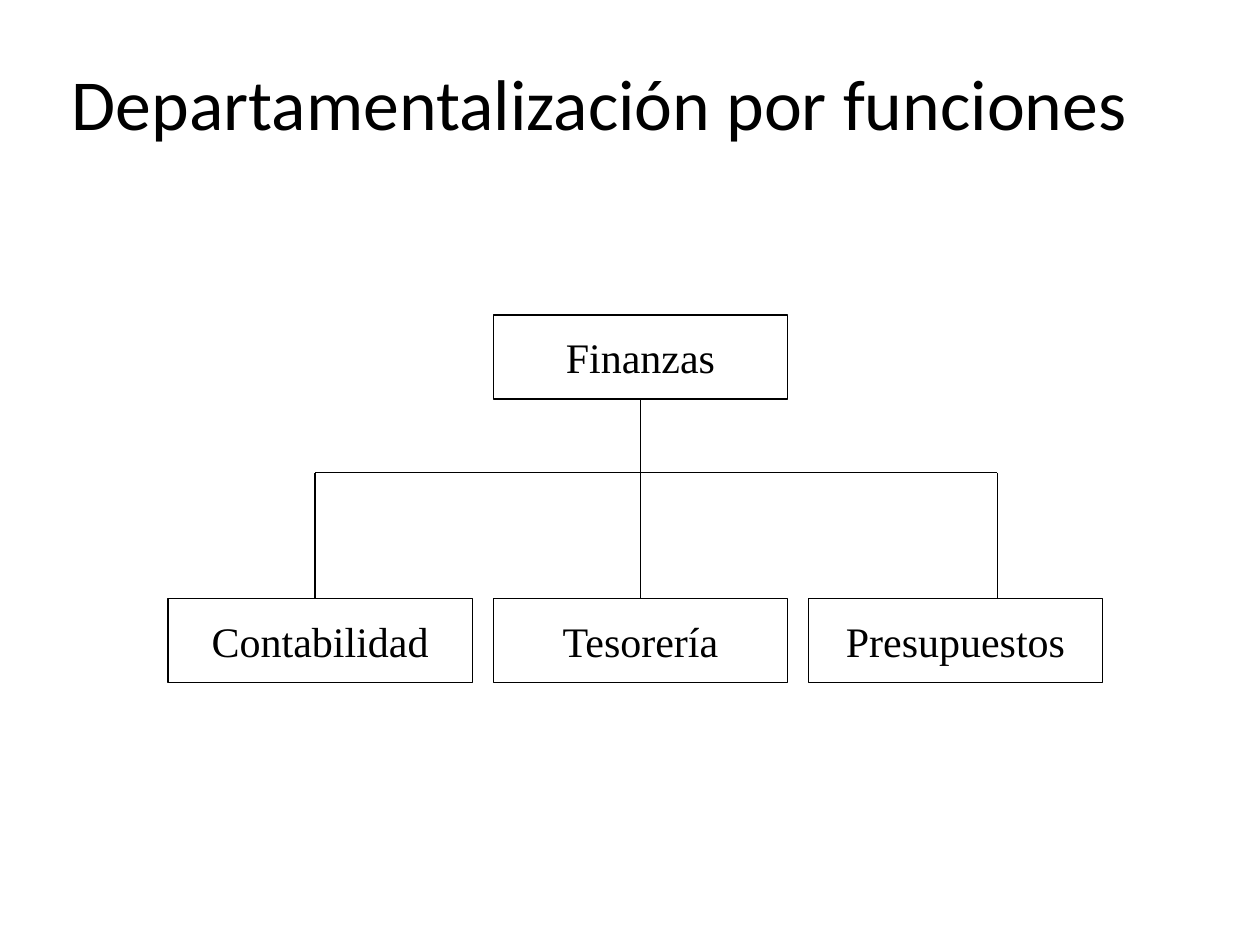
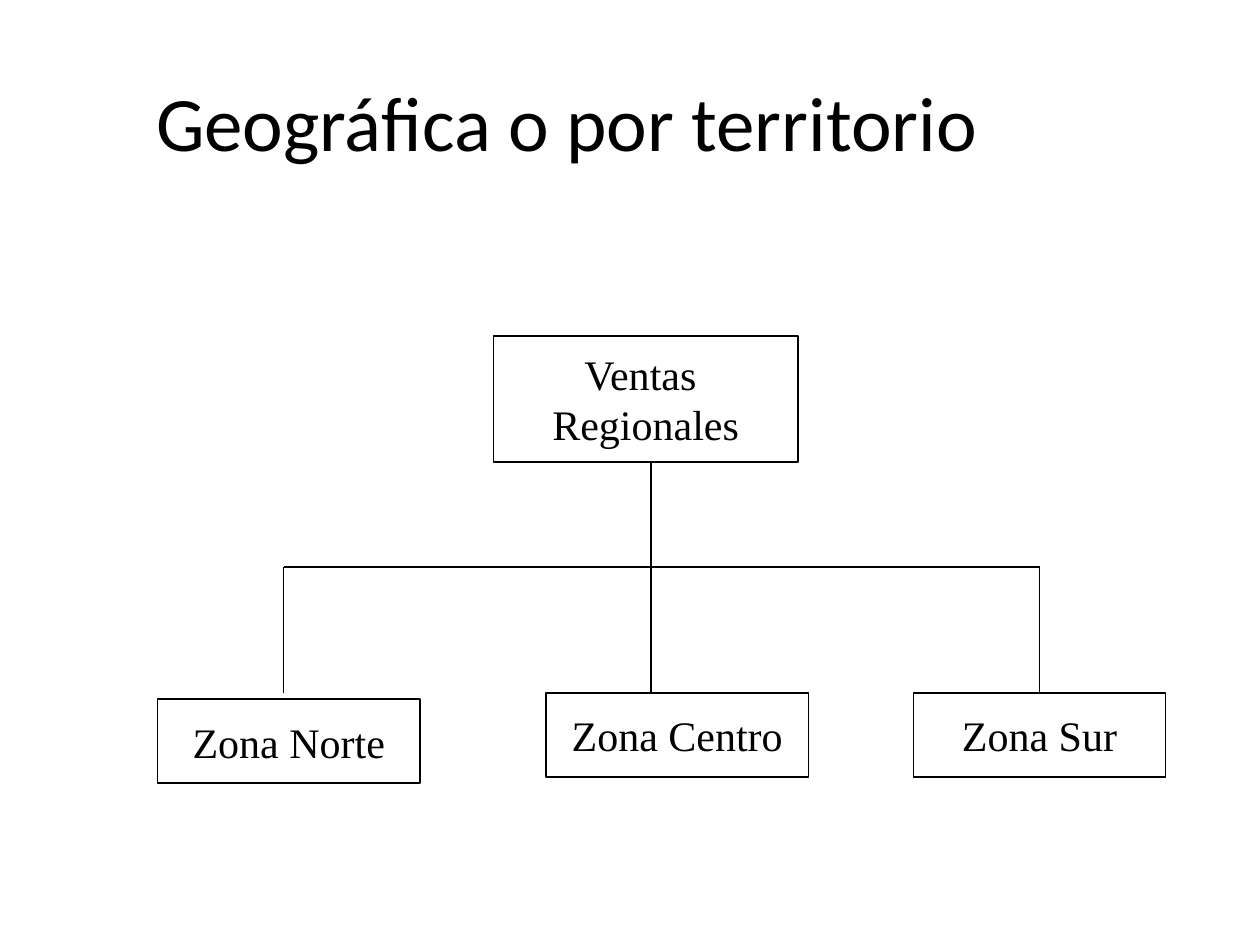
from dataclasses import dataclass

import pptx
import pptx.dml.color
import pptx.enum.shapes
import pptx.enum.text
import pptx.oxml.ns
import pptx.util
from lxml import etree

Pt = pptx.util.Pt
RGB = pptx.dml.color.RGBColor
ALIGN = pptx.enum.text.PP_ALIGN
TOP, BOTTOM = 0, 2  # connection sites of a rectangle


@dataclass(frozen=True)
class Theme:
    ink: RGB = RGB(0, 0, 0)
    paper: RGB = RGB(255, 255, 255)
    title_font: str = "Calibri"
    box_font: str = "Times New Roman"
    box_size: int = 24
    line_width: int = 1
    box_height: int = 48


THEME = Theme()


def add_text(tf, lines, font, size, align):
    tf.vertical_anchor = pptx.enum.text.MSO_ANCHOR.MIDDLE
    for i, line in enumerate(lines):
        p = tf.paragraphs[0] if i == 0 else tf.add_paragraph()
        p.alignment = align
        r = p.add_run()
        r.text = line
        r.font.name = font
        r.font.size = Pt(size)
        r.font.color.rgb = THEME.ink


def add_title(s, text, left, top, size, align):
    sp = s.shapes.add_textbox(Pt(left), Pt(top), Pt(648), Pt(99))
    tf = sp.text_frame
    tf.word_wrap = True
    add_text(tf, [text], THEME.title_font, size, align)
    tf.paragraphs[0].line_spacing = 0.9


def style_line(line):
    line.color.rgb = THEME.ink
    line.width = Pt(THEME.line_width)


def add_box(s, lines, left, top, width, height=THEME.box_height):
    sp = s.shapes.add_shape(pptx.enum.shapes.MSO_SHAPE.RECTANGLE,
                            Pt(left), Pt(top), Pt(width), Pt(height))
    sp.shadow.inherit = False
    sp.fill.solid()
    sp.fill.fore_color.rgb = THEME.paper
    style_line(sp.line)
    sp.text_frame.word_wrap = False
    add_text(sp.text_frame, lines, THEME.box_font, THEME.box_size, ALIGN.CENTER)
    return sp


def add_line(s, x1, y1, x2, y2):
    cxn = s.shapes.add_connector(pptx.enum.shapes.MSO_CONNECTOR.STRAIGHT,
                                 Pt(x1), Pt(y1), Pt(x2), Pt(y2))
    style_line(cxn.line)
    etree.SubElement(cxn._element.spPr, pptx.oxml.ns.qn("a:effectLst"))
    return cxn


def meets(sp, x, y, side):
    """True when the point is the middle of the box's top or bottom side."""
    edge = sp.top if side == TOP else sp.top + sp.height
    return sp.left + sp.width // 2 == Pt(x) and edge == Pt(y)


def add_tree(s, boss, units, stems, bus_y, end_y):
    """Link the boss box to its units: a trunk, a bus and two outer drops."""
    left, trunk, right = stems
    boss_y = (boss.top + boss.height) / Pt(1)
    add_line(s, left, bus_y, right, bus_y)
    for x, start_y, unit in zip(stems, (bus_y, boss_y, bus_y), units):
        cxn = add_line(s, x, start_y, x, end_y)
        if x == trunk and meets(boss, x, start_y, BOTTOM):
            cxn.begin_connect(boss, BOTTOM)
        if meets(unit, x, end_y, TOP):
            cxn.end_connect(unit, TOP)


def build_functions(s):
    add_title(s, "Departamentalización por funciones", 34, 11.5, 41, ALIGN.LEFT)
    boss = add_box(s, ["Finanzas"], 282, 180, 168)
    # Units in a row with equal gaps
    row_y, gap, left = 342, 12, 96
    units = []
    for name, width in (("Contabilidad", 174), ("Tesorería", 168),
                        ("Presupuestos", 168)):
        units.append(add_box(s, [name], left, row_y, width))
        left += width + gap
    add_tree(s, boss, units, (180, 366, 570), 270, row_y)


def build_territory(s):
    add_title(s, "Geográfica o por territorio", 0, 22.5, 44, ALIGN.CENTER)
    boss = add_box(s, ["Ventas ", "Regionales"], 282, 192, 174, 72)
    # Zones; the northern one sits slightly lower
    row_y = 396
    zones = (("Zona Norte", 90, row_y + 3.6, 150),
             ("Zona Centro", 312, row_y, 150),
             ("Zona Sur", 522, row_y, 144))
    units = [add_box(s, [name], x, y, width) for name, x, y, width in zones]
    add_tree(s, boss, units, (162, 372, 594), 324, row_y)


def main():
    prs = pptx.Presentation()
    prs.slide_width, prs.slide_height = Pt(720), Pt(540)
    for build in (build_functions, build_territory):
        s = prs.slides.add_slide(prs.slide_layouts[6])
        s.background.fill.solid()
        s.background.fill.fore_color.rgb = THEME.paper
        build(s)
    prs.save("out.pptx")


if __name__ == "__main__":
    main()
